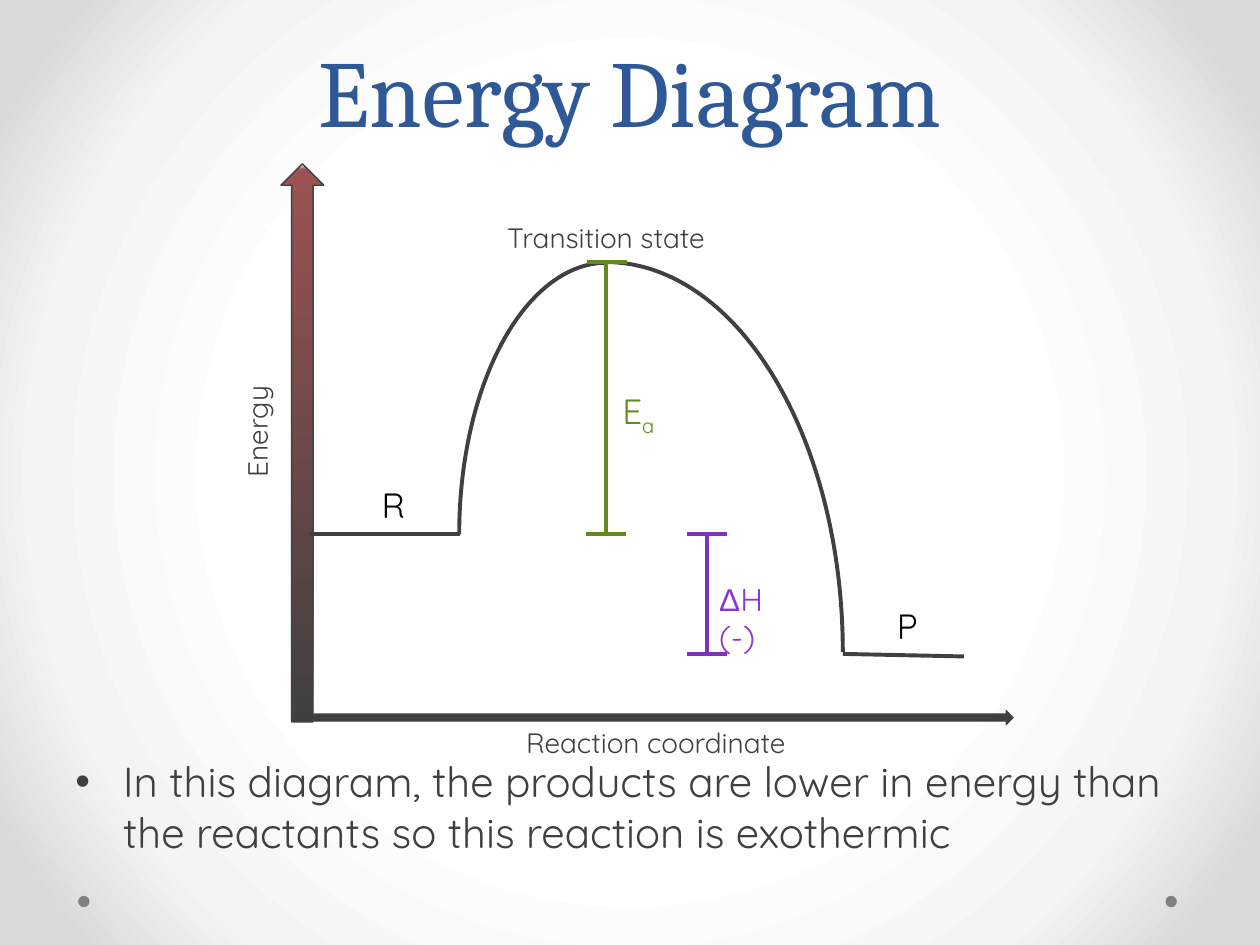
from lxml.etree import SubElement
from pptx import Presentation
from pptx.dml.color import RGBColor
from pptx.enum.shapes import MSO_CONNECTOR, MSO_SHAPE
from pptx.enum.text import MSO_ANCHOR, PP_ALIGN
from pptx.oxml import parse_xml
from pptx.oxml.ns import nsdecls, qn
from pptx.util import Inches, Pt

C = {"title": "2F5897", "ink": "404040", "black": "000000", "dot": "808080",
     "axis": "9C5252", "white": "FFFFFF", "mist": "F4F4F4", "edge": "DADADA",
     "green": "63891F", "purple": "7E31BA", "violet": "8D35D4"}

prs = Presentation()
prs.slide_width, prs.slide_height = Inches(10), Inches(7.5)
s = prs.slides.add_slide(prs.slide_layouts[6])
CELL = prs.slide_width / 100  # grid of 100 columns by 75 rows


def cells(*values):
    return [round(v * CELL) for v in values]


def add_text(box, runs, size, color, align=PP_ALIGN.LEFT, font="Quicksand"):
    tb = s.shapes.add_textbox(*cells(*box))
    tb.text_frame.word_wrap = True
    p = tb.text_frame.paragraphs[0]
    p.alignment = align
    p.font.size = Pt(size)
    p.font.color.rgb = RGBColor.from_string(C[color])
    for text in runs:
        r = p.add_run()
        r.text = text
        r.font.name = font
    return tb


# Background and energy axis gradients
axis = s.shapes.add_shape(MSO_SHAPE.UP_ARROW, *cells(22.3, 13, 3.4, 44.3))
center = '<a:path path="circle"><a:fillToRect l="50000" t="50000" r="50000" b="50000"/></a:path>'
for fill, holder, stops, direction in (
        (s.background.fill, s.background._cSld.bg.bgPr,
         ((50, "white"), (76, "mist"), (92, "edge")), center),
        (axis.fill, axis._element.spPr,
         ((0, "ink"), (99, "axis"), (100, "white")), '<a:lin ang="16200000" scaled="0"/>')):
    fill.gradient()
    old = holder.find(qn("a:gradFill"))
    gs = "".join(f'<a:gs pos="{pos * 1000}"><a:srgbClr val="{C[c]}"/></a:gs>' for pos, c in stops)
    holder.replace(old, parse_xml(
        f'<a:gradFill {nsdecls("a")} rotWithShape="1"><a:gsLst>{gs}</a:gsLst>{direction}</a:gradFill>'))

# Footer dots
for x in (92.5, 6.2):
    sp = s.shapes.add_shape(MSO_SHAPE.OVAL, *cells(x, 71.1, 0.9, 0.9))
    sp.shadow.inherit = False
    sp.fill.solid()
    sp.fill.fore_color.rgb = RGBColor.from_string(C["dot"])
    sp.line.fill.background()

# Title
tf = add_text((5, 0, 90, 12.1), ["Energy Diagram"], 54, "title",
              PP_ALIGN.CENTER, "Cambria").text_frame
tf.vertical_anchor = MSO_ANCHOR.BOTTOM
tf.paragraphs[0].line_spacing = Pt(58)

# Reaction axis and the two halves of the energy curve
reaction = s.shapes.add_shape(MSO_SHAPE.UP_ARROW, *cells(51.9, 29, 1.1, 55.9))
reaction.rotation = 90
reaction.fill.solid()
reaction.fill.fore_color.rgb = RGBColor.from_string(C["ink"])
rise = s.shapes.add_shape(MSO_SHAPE.ARC, *cells(26.6, 30.7, 43.1, 23.4))
rise.rotation = 270
fall = s.shapes.add_shape(MSO_SHAPE.ARC, *cells(29.3, 20.8, 37.6, 61.9))
for sp, width in ((axis, 0.75), (reaction, 0.75), (rise, 2.25), (fall, 2.25)):
    sp.shadow.inherit = False
    sp.line.color.rgb = RGBColor.from_string(C["ink"])
    sp.line.width = Pt(width)
for sp in (rise, fall):
    sp.fill.background()

# Energy levels and measuring bars
PEAK, START, END = 20.8, 42.4, 51.9
for x1, y1, x2, y2, color in (
        (24.5, START, 36.5, START, "ink"),
        (66.9, END, 76.5, END + 0.2, "ink"),
        (48.1, PEAK, 48.1, START, "green"),
        (46.6, PEAK, 49.8, PEAK, "green"),
        (46.5, START, 49.7, START, "green"),
        (56.1, START, 56.1, END, "purple"),
        (54.5, START, 57.7, START, "purple"),
        (54.5, END, 57.7, END, "purple")):
    line = s.shapes.add_connector(MSO_CONNECTOR.STRAIGHT, *cells(x1, y1, x2, y2))
    line.line.color.rgb = RGBColor.from_string(C[color])
    line.line.width = Pt(2.25)
    SubElement(line._element.spPr, qn("a:effectLst"))

# Diagram labels
add_text((29.3, 37.9, 3.8, 4.4), ["R"], 20, "black")
add_text((70.2, 47.5, 3.8, 4.4), ["P"], 20, "black")
add_text((39.2, 57.1, 25.7, 3.7), ["Reaction coordinate"], 16, "ink", PP_ALIGN.CENTER)
add_text((39.1, 17, 18, 3.7), ["Transition state"], 16, "ink", PP_ALIGN.CENTER)
add_text((12.3, 32.4, 16.2, 3.7), ["Energy"], 16, "ink", PP_ALIGN.CENTER).rotation = 270
tb = add_text((56.1, 45.5, 7.2, 7.2), ["Δ", "H (-)"], 18, "violet")
tb.text_frame.paragraphs[0].runs[0].font.name = "Arial"
tb = add_text((48.4, 30.4, 6.1, 4.4), ["E", "a"], 20, "green")
tb.text_frame.paragraphs[0].runs[1].font._element.set("baseline", "-25000")

# Conclusion bullet
tb = add_text((5, 59.5, 90, 12.7), ["In this diagram, the products are lower in energy than "
              "the reactants so this reaction is exothermic"], 24, "ink")
pPr = tb.text_frame.paragraphs[0]._p.get_or_add_pPr()
pPr.set("marL", str(Inches(0.38)))
pPr.set("indent", str(-Inches(0.38)))
defRPr = pPr.find(qn("a:defRPr"))
defRPr.addprevious(parse_xml(f'<a:buFont {nsdecls("a")} typeface="Arial"/>'))
defRPr.addprevious(parse_xml(f'<a:buChar {nsdecls("a")} char="•"/>'))

prs.save("out.pptx")
